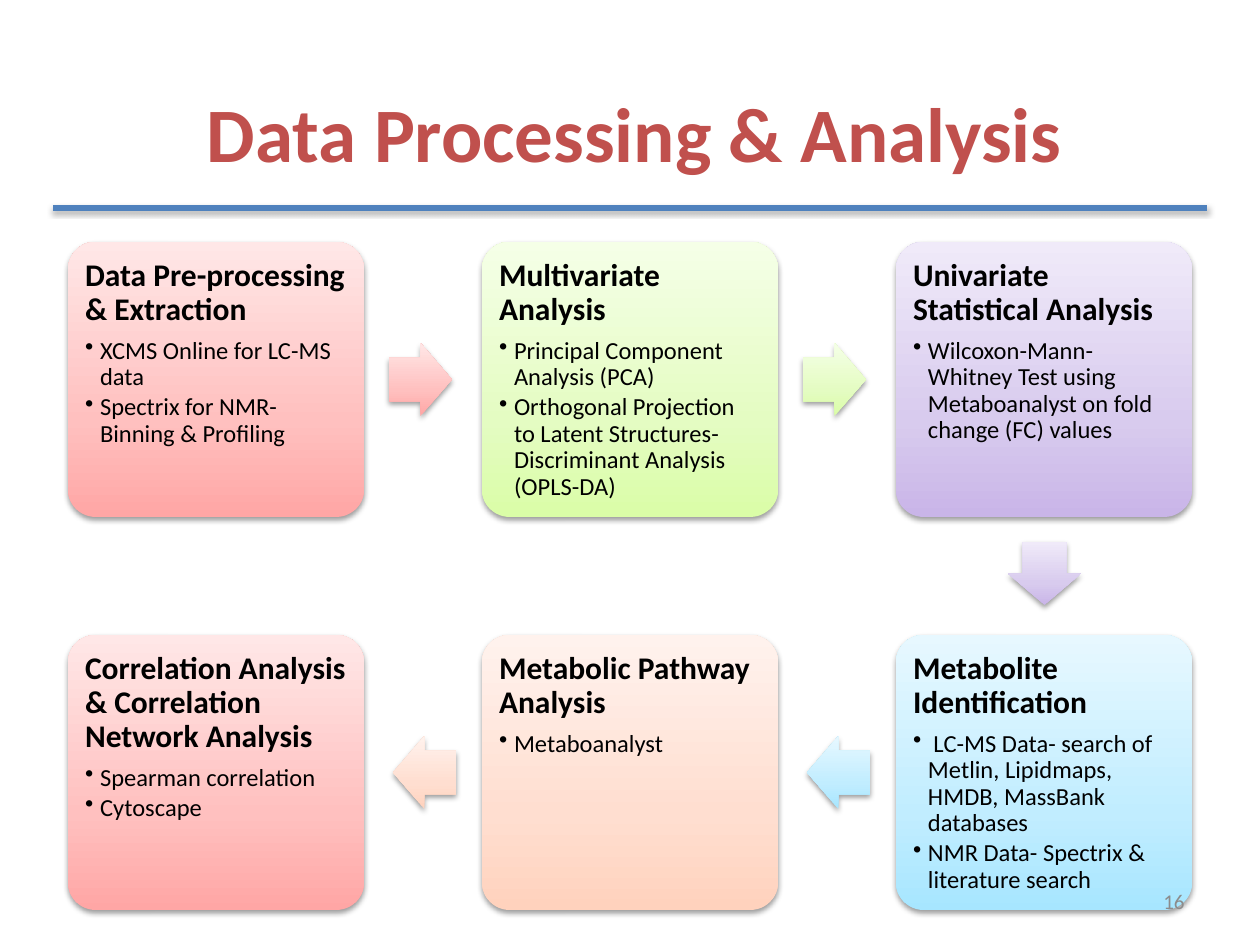
"""Build the data processing and analysis workflow slide."""
from lxml import etree
from pptx import Presentation
from pptx import util as u
from pptx.dml.color import RGBColor
from pptx.enum import shapes, text
from pptx.oxml import parse_xml

SCALE = 914400 / 126
NS = 'xmlns:a="http://schemas.openxmlformats.org/drawingml/2006/main"'
FONT = "Calibri"
BLACK = RGBColor(0x00, 0x00, 0x00)
GREY = RGBColor(0x8C, 0x8C, 0x8C)
BLUE = RGBColor(0x4F, 0x81, 0xBD)
BRICK = RGBColor(0xC0, 0x50, 0x4D)
RED_FADE = RGBColor(0xFF, 0xA6, 0xA5), RGBColor(0xFF, 0xC0, 0xBF), RGBColor(0xFF, 0xE7, 0xE7)
GREEN_FADE = RGBColor(0xDA, 0xFD, 0xA7), RGBColor(0xE4, 0xFC, 0xC2), RGBColor(0xF5, 0xFF, 0xE7)
PURPLE_FADE = RGBColor(0xC9, 0xB5, 0xE8), RGBColor(0xD8, 0xCB, 0xEE), RGBColor(0xF0, 0xEA, 0xF9)
CYAN_FADE = RGBColor(0xA7, 0xE6, 0xFF), RGBColor(0xC1, 0xED, 0xFF), RGBColor(0xE7, 0xF8, 0xFF)
PEACH_FADE = RGBColor(0xFF, 0xD2, 0xBD), RGBColor(0xFF, 0xDE, 0xD0), RGBColor(0xFF, 0xF2, 0xED)

LEFT, TOP, STEP_X, STEP_Y = 68, 242, 414, 393
CARD_W, CARD_H, ARROW_W, ARROW_H = 296, 275, 63, 73
RIGHT, DOWN, BACK = (321, 101, 0), (117, 295, 90), (-89, 101, 180)
STEPS = [
    (0, 0, RED_FADE, RIGHT, "Data Pre-processing & Extraction",
     ["XCMS Online for LC-MS data", "Spectrix for NMR- Binning & Profiling"]),
    (1, 0, GREEN_FADE, RIGHT, "Multivariate Analysis",
     ["Principal Component Analysis (PCA)",
      "Orthogonal Projection to Latent Structures- Discriminant Analysis (OPLS-DA)"]),
    (2, 0, PURPLE_FADE, DOWN, "Univariate Statistical Analysis",
     ["Wilcoxon-Mann-Whitney Test using Metaboanalyst on fold change (FC) values"]),
    (2, 1, CYAN_FADE, BACK, "Metabolite Identification",
     [" LC-MS Data- search of Metlin, Lipidmaps, HMDB, MassBank databases",
      "NMR Data- Spectrix & literature search"]),
    (1, 1, PEACH_FADE, BACK, "Metabolic Pathway Analysis", ["Metaboanalyst"]),
    (0, 1, RED_FADE, None, "Correlation Analysis & Correlation Network Analysis",
     ["Spearman correlation", "Cytoscape"]),
]


def px(*lengths):
    return [u.Emu(round(length * SCALE)) for length in lengths]


def write(para, words, size, color=BLACK, bold=False, align=text.PP_ALIGN.LEFT,
          spacing=None, after=0, bullet=False):
    para.alignment = align
    para.line_spacing = spacing
    para.space_after = u.Pt(after)
    if bullet:
        props = para._p.get_or_add_pPr()
        indent = px(15)[0]
        props.set("marL", str(indent))
        props.set("indent", str(-indent))
        props.append(parse_xml(f'<a:buChar {NS} char="•"/>'))
    span = para.add_run()
    span.text = words
    span.font.name = FONT
    span.font.size = u.Pt(size)
    span.font.bold = bold
    span.font.color.rgb = color


deck = Presentation()
deck.slide_width, deck.slide_height = px(1260, 945)
page = deck.slides.add_slide(deck.slide_layouts[5])
shadow = (f'<a:effectLst {NS}><a:outerShdw blurRad="40000" dist="20000" dir="5400000" '
          'rotWithShape="0"><a:srgbClr val="000000"><a:alpha val="38000"/></a:srgbClr>'
          '</a:outerShdw></a:effectLst>')

title = page.shapes.title
title.left, title.top, title.width, title.height = px(63, 53, 1144, 158)
title.text_frame.vertical_anchor = text.MSO_ANCHOR.MIDDLE
write(title.text_frame.paragraphs[0], "Data Processing & Analysis", 44,
      color=BRICK, bold=True, align=text.PP_ALIGN.CENTER)

rule = page.shapes.add_connector(shapes.MSO_CONNECTOR.STRAIGHT, *px(53, 208, 1207, 208))
rule.line.color.rgb = BLUE
rule.line.width = u.Pt(3)
rule._element.spPr.append(parse_xml(shadow))

for column, row, fade, arrow_place, heading, points in STEPS:
    x, y = LEFT + column * STEP_X, TOP + row * STEP_Y
    card = page.shapes.add_shape(shapes.MSO_SHAPE.ROUNDED_RECTANGLE, *px(x, y, CARD_W, CARD_H))
    card.adjustments[0] = 0.1
    parts = [card]
    if arrow_place:
        dx, dy, turn = arrow_place
        arrow = page.shapes.add_shape(shapes.MSO_SHAPE.RIGHT_ARROW,
                                      *px(x + dx, y + dy, ARROW_W, ARROW_H))
        arrow.adjustments[0], arrow.adjustments[1] = 0.6, 0.5
        arrow.rotation = turn
        parts.append(arrow)

    stops = "".join(f'<a:gs pos="{place}"><a:srgbClr val="{color}"/></a:gs>'
                    for place, color in zip((0, 35000, 100000), fade))
    for part in parts:
        part._element.spPr.append(parse_xml(
            f'<a:gradFill {NS} rotWithShape="0"><a:gsLst>{stops}</a:gsLst>'
            '<a:lin ang="16200000" scaled="1"/></a:gradFill>'))
        part.line.fill.background()
        part._element.spPr.append(parse_xml(shadow))

    frame = card.text_frame
    frame.word_wrap = True
    frame.vertical_anchor = text.MSO_ANCHOR.TOP
    frame.margin_left, frame.margin_top, frame.margin_right, frame.margin_bottom = px(9, 9, 9, 9)
    write(frame.paragraphs[0], heading, 18, bold=True, spacing=0.9, after=6.3)
    for point in points:
        write(frame.add_paragraph(), point, 14, spacing=0.9, after=2.1, bullet=True)

number = page.shapes.add_textbox(*px(903, 876, 294, 50))
number.text_frame.word_wrap = True
number.text_frame.vertical_anchor = text.MSO_ANCHOR.MIDDLE
write(number.text_frame.paragraphs[0], "16", 12, color=GREY, align=text.PP_ALIGN.RIGHT)

deck.save("out.pptx")
